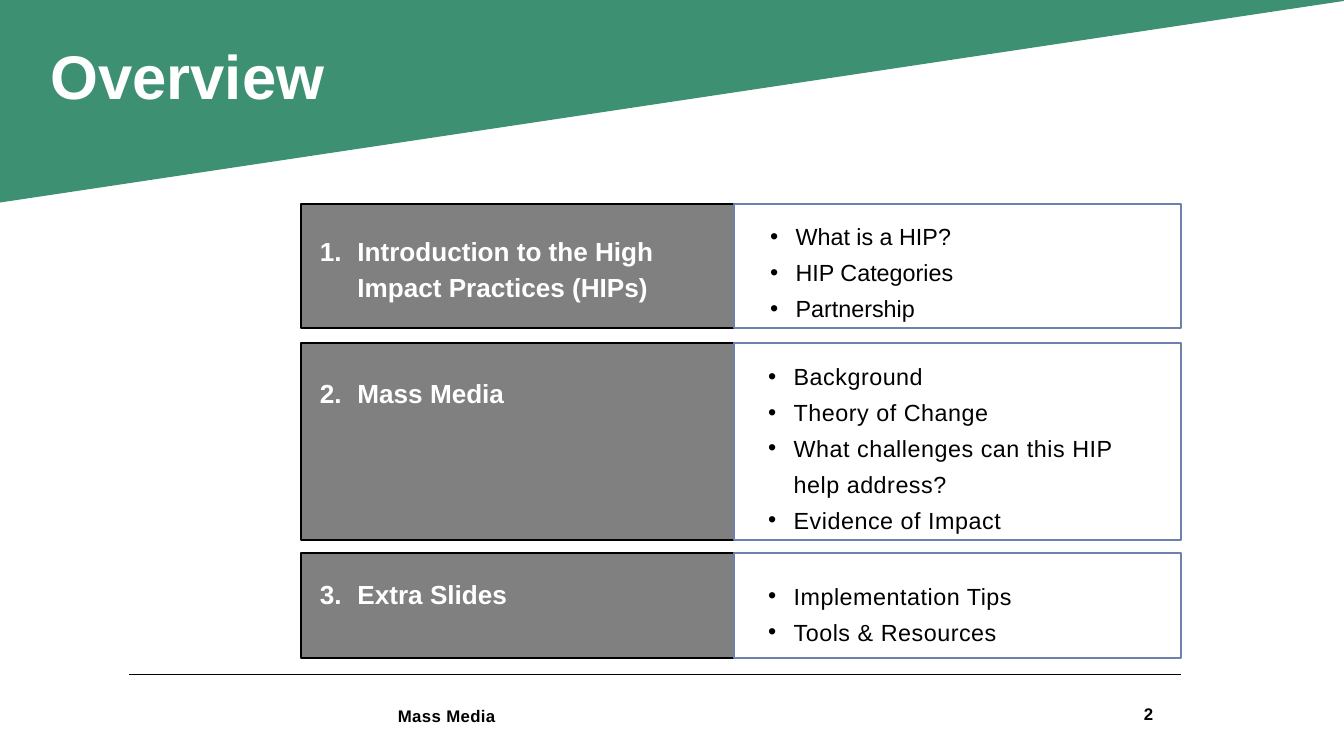
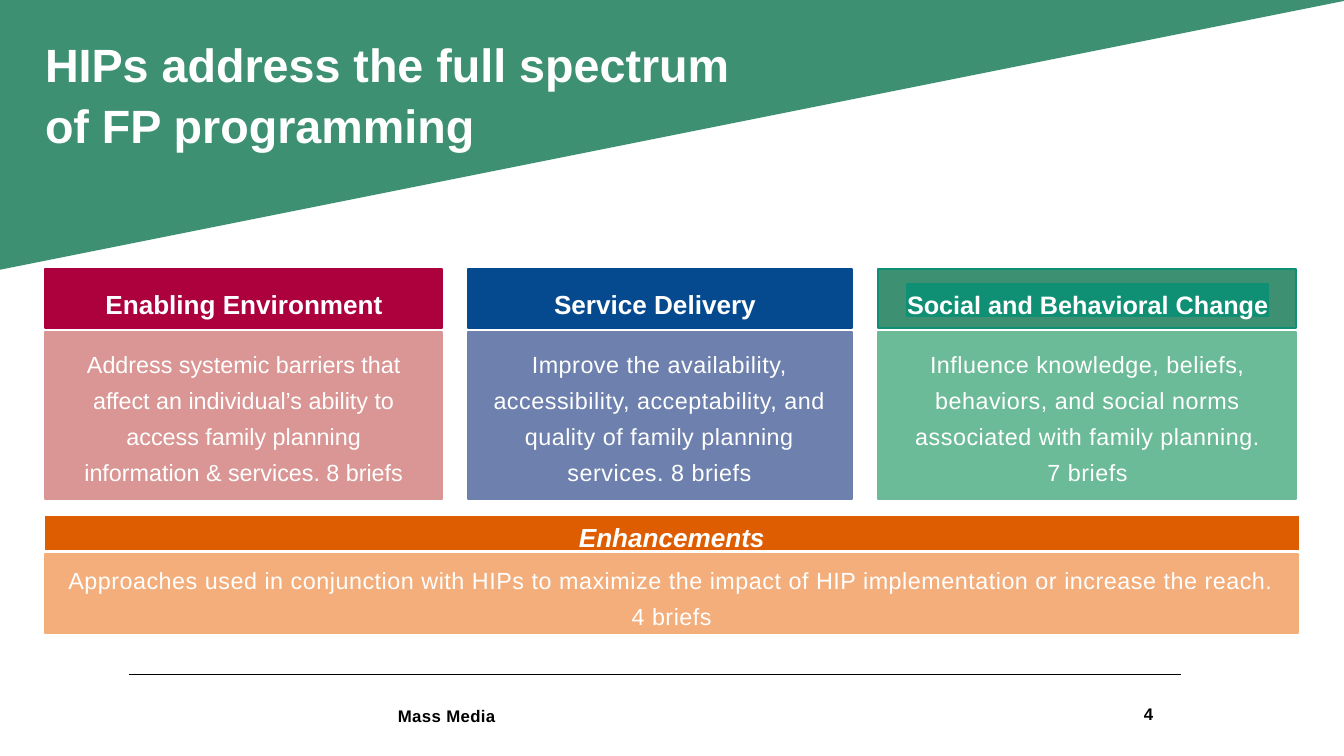
"""Build the overview and programming-spectrum slides of the Mass Media deck."""
from lxml.etree import SubElement
from pptx import Presentation
from pptx.dml.color import RGBColor
from pptx.enum.shapes import MSO_CONNECTOR as CONNECTOR, MSO_SHAPE as SHAPE
from pptx.enum.text import MSO_ANCHOR as ANCHOR, MSO_AUTO_SIZE as FIT, PP_ALIGN as ALIGN
from pptx.oxml.ns import qn
from pptx.util import Inches, Pt

WHITE = RGBColor(0xFF, 0xFF, 0xFF)
BLACK = RGBColor(0x00, 0x00, 0x00)
GREEN = RGBColor(0x3E, 0x90, 0x73)
TEAL = RGBColor(0x0F, 0x8F, 0x73)
MINT = RGBColor(0x6B, 0xBB, 0x99)
GREY = RGBColor(0x80, 0x80, 0x80)
SLATE = RGBColor(0x6E, 0x81, 0xAE)
NAVY = RGBColor(0x05, 0x4A, 0x8E)
CRIMSON = RGBColor(0xAD, 0x01, 0x3E)
ROSE = RGBColor(0xD9, 0x96, 0x94)
ORANGE = RGBColor(0xDD, 0x5D, 0x00)
PEACH = RGBColor(0xF3, 0xAE, 0x7B)
FONT = "Arial"


def write(shape, text, size=25, color=WHITE, bold=False, italic=False, align=ALIGN.LEFT,
          leading=38.5, tracking=0, anchor=ANCHOR.TOP, hang=0, bullet=None, number=None):
    """Fill a shape with one paragraph per line of text."""
    frame = shape.text_frame
    frame.word_wrap = True
    frame.auto_size = FIT.NONE
    frame.vertical_anchor = anchor
    frame.margin_left = frame.margin_top = frame.margin_right = frame.margin_bottom = 0
    for index, line in enumerate(text.split("\n")):
        paragraph = frame.add_paragraph() if index else frame.paragraphs[0]
        properties = paragraph._p.get_or_add_pPr()
        properties.set("marL", str(Inches(hang)))
        properties.set("indent", str(-Inches(hang)))
        if bullet:
            SubElement(properties, qn("a:buFont"), typeface=FONT)
            SubElement(properties, qn("a:buChar"), char=bullet)
        elif number:
            SubElement(properties, qn("a:buFont"), typeface=FONT)
            SubElement(properties, qn("a:buAutoNum"), type="arabicPeriod", startAt=str(number))
        else:
            SubElement(properties, qn("a:buNone"))
        paragraph.alignment = align
        paragraph.line_spacing = Pt(leading)
        paragraph.space_before = paragraph.space_after = Pt(0)
        run = paragraph.add_run()
        run.text = line
        run.font.name, run.font.size = FONT, Pt(size)
        run.font.bold, run.font.italic = bold, italic
        run.font.color.rgb = color
        if tracking:
            run._r.get_or_add_rPr().set("spc", str(round(tracking * 100)))


def panel(slide, left, top, width, height, fill, line=None, weight=2):
    """Add a flat rectangle outlined in its own fill unless a line colour is given."""
    rectangle = slide.shapes.add_shape(SHAPE.RECTANGLE, *map(Inches, (left, top, width, height)))
    rectangle.shadow.inherit = False
    rectangle.fill.solid()
    rectangle.fill.fore_color.rgb = fill
    rectangle.line.color.rgb = line or fill
    rectangle.line.width = Pt(weight)
    return rectangle


deck = Presentation()
deck.slide_width, deck.slide_height = Inches(20), Inches(11.25)
overview = deck.slides.add_slide(deck.slide_layouts.get_by_name("Comparison"))
spectrum = deck.slides.add_slide(deck.slide_layouts.get_by_name("Title Only"))

headers = [
    (overview, "Overview", (0.75, 0.61, 5.68, 1.07), 66, 75.6, 3.43, "2"),
    (spectrum, "HIPs address the full spectrum of FP programming",
     (0.67, 0.47, 10.58, 1.82), 50, 65, 3.89, "4"),
]
for slide, heading, place, size, leading, depth, page in headers:
    outline = slide.shapes.build_freeform(0, 0, scale=Inches(1))
    outline.add_line_segments([(0, depth), (19.95, 0)], close=True)
    band = outline.convert_to_shape()
    band.shadow.inherit = False
    band.fill.solid()
    band.fill.fore_color.rgb = band.line.color.rgb = GREEN
    band.line.width = Pt(2)

    title = slide.shapes.title
    title.left, title.top, title.width, title.height = map(Inches, place)
    band.element.addnext(title.element)
    write(title, heading, size=size, bold=True, leading=leading)

    rule = slide.shapes.add_connector(
        CONNECTOR.STRAIGHT, Inches(1.92), Inches(10.04), Inches(17.58), Inches(10.04))
    rule.line.color.rgb = BLACK
    rule.line.width = Pt(0.75)
    SubElement(rule.element.spPr, qn("a:effectLst"))

    footer = slide.shapes.add_textbox(*map(Inches, (5.92, 10.45, 10.7, 0.33)))
    write(footer, "Mass Media", size=18, color=BLACK, bold=True, leading=25.2, tracking=0.4)
    page_number = slide.shapes.add_textbox(*map(Inches, (14.93, 10.42, 2.23, 0.4)))
    write(page_number, page, size=18, color=BLACK, bold=True, align=ALIGN.RIGHT,
          leading=21.6, anchor=ANCHOR.MIDDLE)

sections = [
    ("Introduction to the High Impact Practices (HIPs)", 3.03, 1.85, 3.44, 1.02,
     "What is a HIP?\nHIP Categories\nPartnership", (11.46, 3.19, 5.81, 1.55), 0),
    ("Mass Media", 5.11, 2.92, 5.55, 0.49,
     "Background\nTheory of Change\nWhat challenges can this HIP help address?\n"
     "Evidence of Impact", (11.43, 5.27, 5.77, 2.61), 0.6),
    ("Extra Slides", 8.23, 1.56, 8.54, 0.49,
     "Implementation Tips\nTools & Resources", (11.43, 8.54, 6.03, 1.01), 0.6),
]
for number, section in enumerate(sections, 1):
    name, top, height, name_top, name_height, topics, place, tracking = section
    panel(overview, 4.48, top, 6.44, height, GREY, BLACK)
    panel(overview, 10.92, top, 6.66, height, WHITE, SLATE)
    label = overview.shapes.add_textbox(*map(Inches, (4.76, name_top, 5.88, name_height)))
    write(label, name, size=28, bold=True, hang=0.56, number=number)
    topic_list = overview.placeholders[number]
    topic_list.left, topic_list.top, topic_list.width, topic_list.height = map(Inches, place)
    label.element.addnext(topic_list.element)
    write(topic_list, topics, color=BLACK, tracking=tracking, hang=0.38, bullet="•")
spare = overview.placeholders[4].element
spare.getparent().remove(spare)

categories = [
    ("Enabling Environment", 28, 0.67, 5.91, CRIMSON, CRIMSON, ROSE, 1.18, 4.9, 1.15, 4.95, 0,
     "Address systemic barriers that affect an individual’s ability to access family planning "
     "information & services. 8 briefs"),
    ("Service Delivery", 28, 6.96, 5.72, NAVY, NAVY, SLATE, 7.51, 4.47, 7.34, 4.95, 0.6,
     "Improve the availability, accessibility, acceptability, and quality of family planning "
     "services. 8 briefs"),
    ("Social and Behavioral Change", 27, 13.07, 6.22, GREEN, TEAL, MINT, 13.49, 5.39,
     13.08, 6.21, 0.6,
     "Influence knowledge, beliefs, behaviors, and social norms associated with family planning."
     "\n7 briefs"),
]
for (name, size, left, width, fill, edge, tint, name_left, name_width,
     aim_left, aim_width, tracking, aim) in categories:
    panel(spectrum, left, 4.01, width, 0.87, fill, edge)
    panel(spectrum, left, 4.94, width, 2.48, tint)
    label = panel(spectrum, name_left, 4.22, name_width, 0.49, edge, weight=0.75)
    write(label, name, size=size, bold=True, align=ALIGN.CENTER)
    description = spectrum.shapes.add_textbox(*map(Inches, (aim_left, 5.1, aim_width, 2.09)))
    write(description, aim, align=ALIGN.CENTER, tracking=tracking)

panel(spectrum, 0.67, 8.24, 18.65, 1.18, PEACH)
enhancements = panel(spectrum, 0.67, 7.69, 18.65, 0.49, ORANGE, weight=0.75)
write(enhancements, "Enhancements", size=28, bold=True, italic=True, align=ALIGN.CENTER)
approaches = spectrum.shapes.add_textbox(*map(Inches, (1, 8.41, 17.99, 0.86)))
write(approaches, "Approaches used in conjunction with HIPs to maximize the impact of HIP "
      "implementation or increase the reach. 4 briefs",
      align=ALIGN.CENTER, tracking=0.6, anchor=ANCHOR.MIDDLE)

deck.save("out.pptx")
